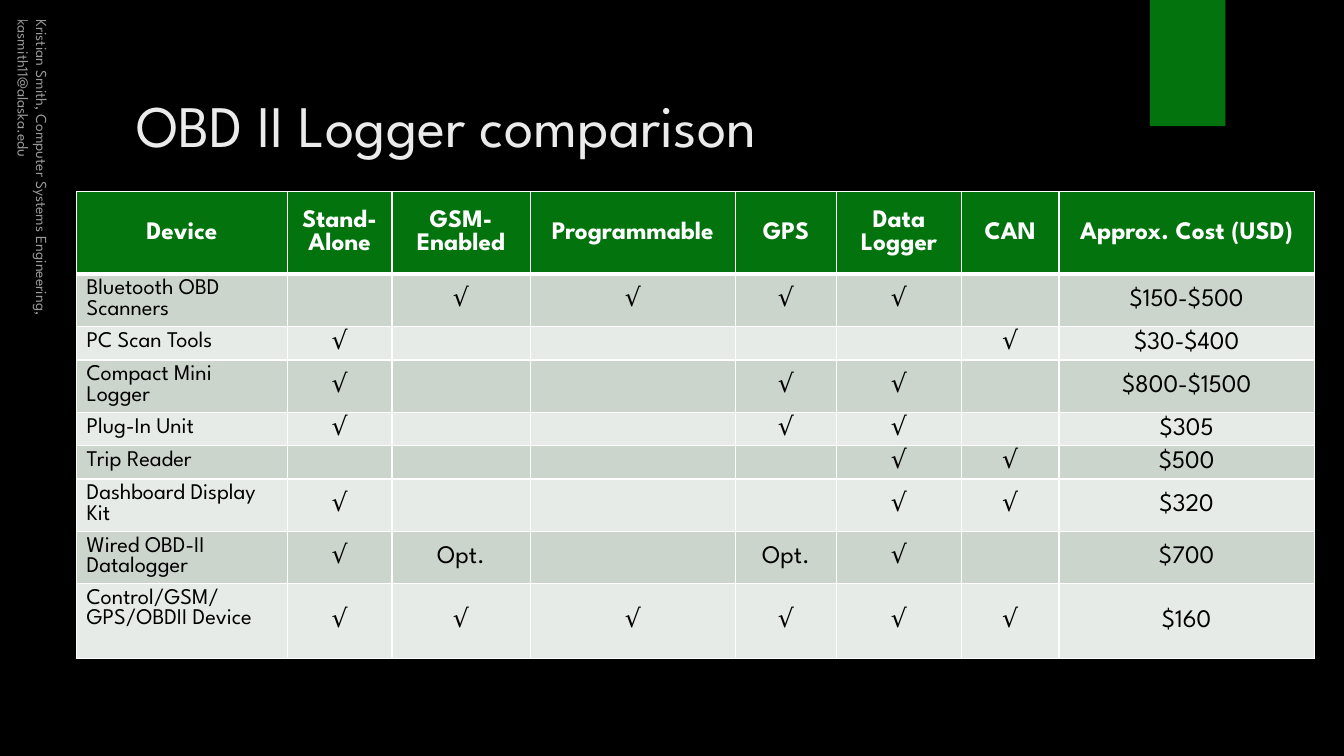
from dataclasses import dataclass

from lxml import etree
from pptx import Presentation
from pptx.dml.color import RGBColor
from pptx.enum import shapes, text
from pptx.oxml import ns
from pptx.util import Cm, Pt

FONT = "League Spartan"
GREEN, WHITE, BLACK = "03730E", "FFFFFF", "000000"
BANDS = ("CCD5CC", "E7EBE7")
WIDTHS = (5.31, 2.64, 3.48, 5.18, 2.54, 3.15, 2.46, 6.43)
HEADERS = ("Device", "Stand-Alone", "GSM-Enabled", "Programmable", "GPS",
           "Data Logger", "CAN", "Approx. Cost (USD)")
HEADER_HEIGHT = 2.08
YES, NO, OPT = "√", "", "Opt."


@dataclass(frozen=True)
class Device:
    name: str
    features: tuple[str, ...]
    cost: str
    height: float


@dataclass(frozen=True)
class Label:
    text: str
    left: float
    top: float
    width: float
    height: float
    size: float
    color: str
    anchor: text.MSO_ANCHOR
    rotation: float = 0
    alpha: int = 100


DEVICES = (
    Device("Bluetooth OBD Scanners", (NO, YES, YES, YES, YES, NO), "$150-$500", 1.32),
    Device("PC Scan Tools", (YES, NO, NO, NO, NO, YES), "$30-$400", 0.84),
    Device("Compact Mini Logger", (YES, NO, NO, YES, YES, NO), "$800-$1500", 1.32),
    Device("Plug-In Unit", (YES, NO, NO, YES, YES, NO), "$305", 0.84),
    Device("Trip Reader", (NO, NO, NO, NO, YES, YES), "$500", 0.84),
    Device("Dashboard Display Kit", (YES, NO, NO, NO, YES, YES), "$320", 1.32),
    Device("Wired OBD-II Datalogger", (YES, OPT, NO, OPT, YES, NO), "$700", 1.32),
    Device("Control/GSM/GPS/OBDII Device", (YES,) * 6, "$160", 1.88),
)
LABELS = (
    Label("OBD II Logger comparison", 3.18, 1.73, 27.51, 2.77, 42, "EBEBEB",
          text.MSO_ANCHOR.MIDDLE),
    Label("Kristian Smith, Computer Systems Engineering, kasmith11@alaska.edu",
          -4.7, 5.18, 10.72, 0.84, 11, WHITE, text.MSO_ANCHOR.BOTTOM, 90, 60),
)


def rgb(value: str) -> RGBColor:
    return RGBColor.from_string(value)


def set_font(p, size: float, color: str, bold: bool = False) -> None:
    p.font.name = FONT
    p.font.size = Pt(size)
    p.font.bold = bold
    p.font.color.rgb = rgb(color)


def add_label(s, label: Label) -> None:
    box = s.shapes.add_textbox(Cm(label.left), Cm(label.top),
                               Cm(label.width), Cm(label.height))
    box.rotation = label.rotation
    tf = box.text_frame
    tf.word_wrap = True
    tf.vertical_anchor = label.anchor
    p = tf.paragraphs[0]
    p.text = label.text
    set_font(p, label.size, label.color)
    if label.alpha < 100:
        clr = p._p.find(".//" + ns.qn("a:srgbClr"))
        etree.SubElement(clr, ns.qn("a:alpha"), val=str(label.alpha * 1000))


def set_borders(cell, row: int) -> None:
    points = {"L": 1, "R": 1, "T": 3 if row == 1 else 1, "B": 3 if row == 0 else 1}
    tc_pr = cell._tc.get_or_add_tcPr()
    for side, width in points.items():
        ln = etree.SubElement(tc_pr, ns.qn(f"a:ln{side}"), w=str(Pt(width)))
        fill = etree.SubElement(ln, ns.qn("a:solidFill"))
        etree.SubElement(fill, ns.qn("a:srgbClr"), val=WHITE)


def fill_cell(cell, value: str, row: int, col: int) -> None:
    header, name = row == 0, row > 0 and col == 0
    set_borders(cell, row)
    cell.fill.solid()
    cell.fill.fore_color.rgb = rgb(GREEN if header else BANDS[(row - 1) % 2])
    cell.vertical_anchor = text.MSO_ANCHOR.TOP if name else text.MSO_ANCHOR.MIDDLE
    p = cell.text_frame.paragraphs[0]
    p.text = value
    p.alignment = text.PP_ALIGN.LEFT if name else text.PP_ALIGN.CENTER
    set_font(p, 16 if name else 18, WHITE if header else BLACK, header)
    if not value:
        end = etree.SubElement(p._p, ns.qn("a:endParaRPr"), sz="1800")
        etree.SubElement(end, ns.qn("a:latin"), typeface=FONT)


def add_comparison(s) -> None:
    rows = [HEADERS] + [(d.name, *d.features, d.cost) for d in DEVICES]
    heights = [HEADER_HEIGHT] + [d.height for d in DEVICES]
    table = s.shapes.add_table(len(rows), len(WIDTHS), Cm(1.93), Cm(4.83),
                               Cm(sum(WIDTHS)), Cm(sum(heights))).table
    for column, width in zip(table.columns, WIDTHS):
        column.width = Cm(width)
    for i, (values, height) in enumerate(zip(rows, heights)):
        table.rows[i].height = Cm(height)
        for j, value in enumerate(values):
            fill_cell(table.cell(i, j), value, i, j)


def add_tab(s) -> None:
    sp = s.shapes.add_shape(shapes.MSO_SHAPE.RECTANGLE, Cm(28.98), Cm(0),
                            Cm(1.9), Cm(3.18))
    sp.shadow.inherit = False
    sp.fill.solid()
    sp.fill.fore_color.rgb = rgb(GREEN)
    sp.line.fill.background()


def main() -> None:
    prs = Presentation()
    prs.slide_width, prs.slide_height = Cm(33.87), Cm(19.05)
    s = prs.slides.add_slide(prs.slide_layouts[6])
    s.background.fill.solid()
    s.background.fill.fore_color.rgb = rgb(BLACK)
    add_tab(s)
    add_comparison(s)
    for label in LABELS:
        add_label(s, label)
    prs.save("out.pptx")


if __name__ == "__main__":
    main()
